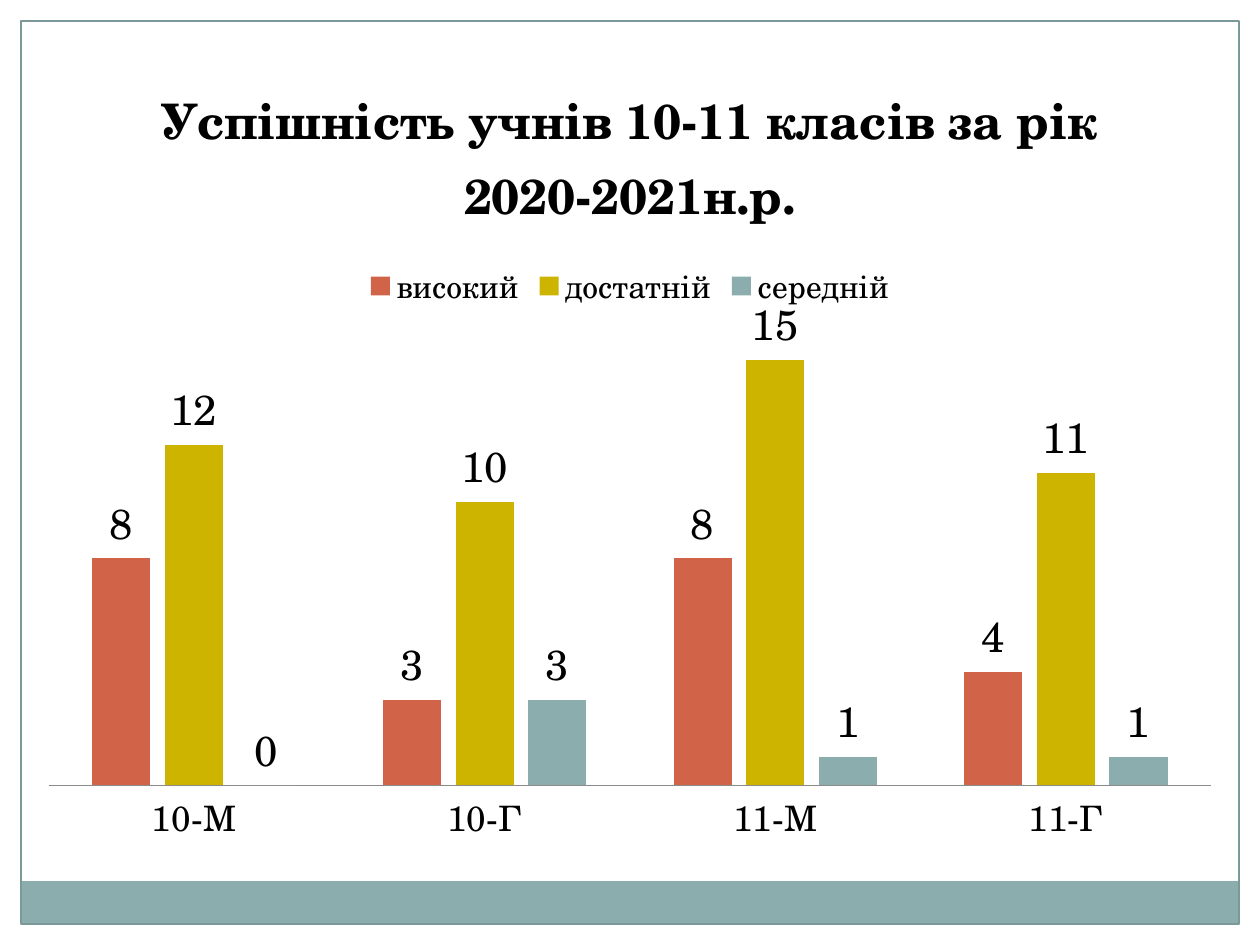
from pptx import Presentation
from pptx.chart.data import CategoryChartData
from pptx.dml.color import RGBColor
from pptx.enum.chart import XL_CHART_TYPE, XL_LABEL_POSITION, XL_LEGEND_POSITION, XL_TICK_MARK
from pptx.enum.shapes import MSO_SHAPE
from pptx.util import Pt

FONT = "TeX Gyre Schola"
COLORS = {
    "paper": "FFFFFF",
    "text": "000000",
    "border": "7C999A",
    "axis": "8B8B8B",
    "band": "8CADAE",
    "високий": "D16349",
    "достатній": "CCB400",
    "середній": "8CADAE",
}
CLASSES = ["10-М", "10-Г", "11-М", "11-Г"]
RESULTS = {
    "високий": (8, 3, 8, 4),
    "достатній": (12, 10, 15, 11),
    "середній": (0, 3, 1, 1),
}


def color(key):
    return RGBColor.from_string(COLORS[key])


def style_font(font, size, bold=False):
    font.name = FONT
    font.size = Pt(size)
    font.bold = bold
    font.color.rgb = color("text")


def write_text(text_frame, text, **font_format):
    run = text_frame.paragraphs[0].add_run()
    run.text = text
    style_font(run.font, **font_format)


def add_rectangle(slide, box, fill=None, line=None):
    rectangle = slide.shapes.add_shape(MSO_SHAPE.RECTANGLE, *map(Pt, box))
    rectangle.shadow.inherit = False
    if fill:
        rectangle.fill.solid()
        rectangle.fill.fore_color.rgb = color(fill)
    else:
        rectangle.fill.background()
    if line:
        rectangle.line.color.rgb = color(line)
        rectangle.line.width = Pt(0.75)
    else:
        rectangle.line.fill.background()


def add_frame(slide, box, margin=12, band_height=24.5):
    """Paper margins, a band along the bottom and a thin border."""
    left, top, width, height = box
    inner_width, inner_height = width - 2 * margin, height - 2 * margin
    add_rectangle(slide, (left, top, width, margin), fill="paper")
    for margin_left in (left + width - margin, left):
        add_rectangle(slide, (margin_left, top, margin, height), fill="paper")
    band_top = top + height - margin - band_height
    add_rectangle(slide, (left + margin, band_top, inner_width, band_height), fill="band")
    add_rectangle(slide, (left + margin, top + margin, inner_width, inner_height), line="border")


def add_results_chart(slide, box):
    results = CategoryChartData(number_format="General")
    results.categories = CLASSES
    for level, counts in RESULTS.items():
        results.add_series(level, counts)
    chart = slide.shapes.add_chart(
        XL_CHART_TYPE.COLUMN_CLUSTERED, *map(Pt, box), results).chart
    style_font(chart.font, size=10)

    chart.has_title = True
    write_text(chart.chart_title.text_frame,
               "Успішність учнів 10-11 класів за рік 2020-2021н.р.", size=28, bold=True)
    chart.chart_title.include_in_layout = False

    chart.has_legend = True
    chart.legend.position = XL_LEGEND_POSITION.TOP
    chart.legend.include_in_layout = False
    style_font(chart.legend.font, size=18)

    class_axis = chart.category_axis
    class_axis.major_tick_mark = XL_TICK_MARK.NONE
    class_axis.format.line.color.rgb = color("axis")
    style_font(class_axis.tick_labels.font, size=20)
    chart.value_axis.visible = False
    chart.value_axis.has_major_gridlines = False

    columns = chart.plots[0]
    columns.gap_width = 150
    columns.overlap = -25
    columns.vary_by_categories = False
    for level in columns.series:
        level.format.fill.solid()
        level.format.fill.fore_color.rgb = color(level.name)
        level.data_labels.show_value = True
        level.data_labels.position = XL_LABEL_POSITION.OUTSIDE_END
        style_font(level.data_labels.font, size=24)


def main():
    presentation = Presentation()
    presentation.slide_width, presentation.slide_height = Pt(720), Pt(540)
    slide = presentation.slides.add_slide(presentation.slide_layouts[6])
    add_frame(slide, (0, 0, 720, 540))
    add_results_chart(slide, (14, 26, 692, 465))
    presentation.save("out.pptx")


if __name__ == "__main__":
    main()
